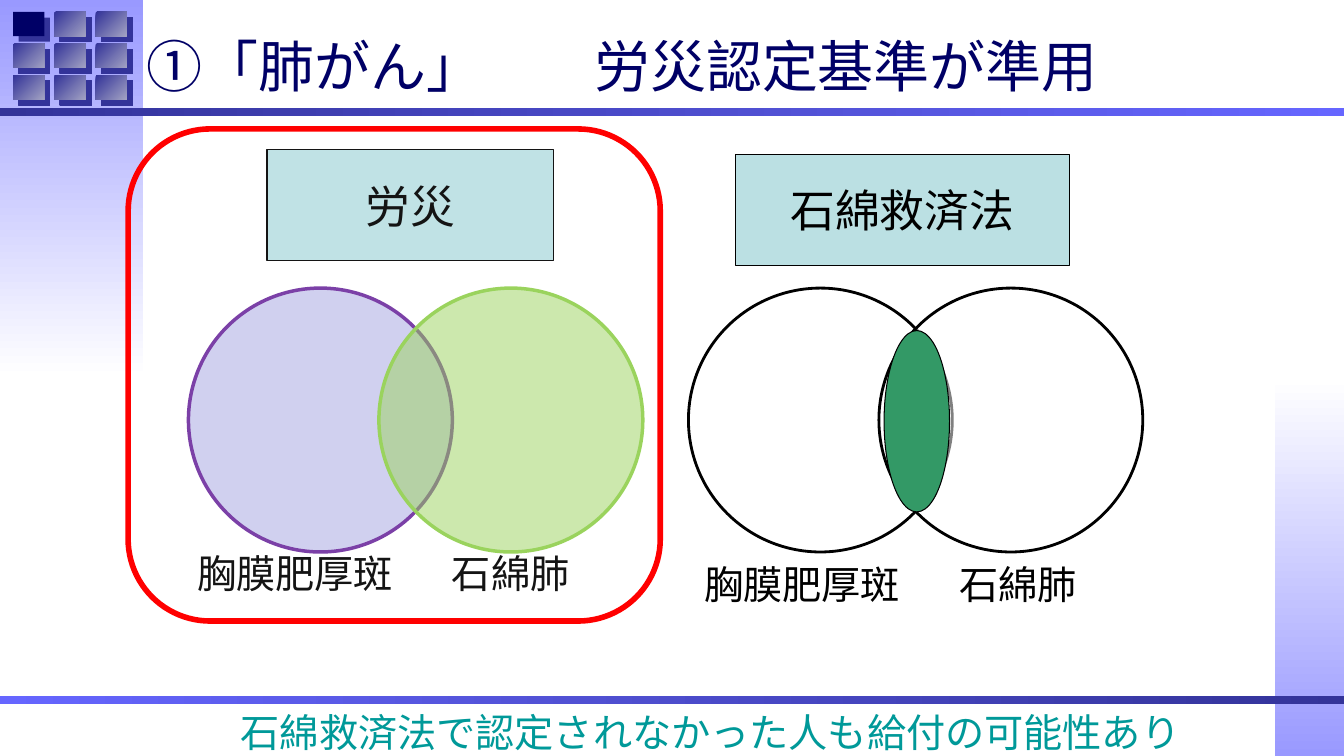
"""Build the slide comparing the lung cancer criteria of two compensation schemes."""
from lxml.etree import SubElement
from pptx import Presentation
from pptx.dml.color import RGBColor
from pptx.enum.shapes import MSO_SHAPE as Shape
from pptx.enum.text import MSO_ANCHOR as Anchor, PP_ALIGN as Align
from pptx.oxml.ns import qn
from pptx.util import Cm, Pt

COLORS = {
    "white": "FFFFFF", "black": "000000", "navy": "000066", "indigo": "333399",
    "blue": "6666FF", "lavender": "9999FF", "haze": "A2A2C3", "periwinkle": "9C9CDF",
    "purple": "7030A0", "lime": "92D050", "green": "339966", "sky": "BBE0E3",
    "teal": "009999", "red": "FF0000",
}
WIDTH, HEIGHT = 33.87, 19.05


class SlideBuilder:
    """Hold the style and the current slide."""

    def __init__(self, slide, font="Arial"):
        self.shapes = slide.shapes
        self.font = font

    def color(self, name):
        return RGBColor.from_string(COLORS[name])

    def outline(self, shape, line):
        if line:
            name, width = line
            shape.line.color.rgb = self.color(name)
            shape.line.width = Pt(width)
        else:
            shape.line.fill.background()

    def shape(self, kind, box, fill, line=None, alpha=None):
        shape = self.shapes.add_shape(kind, *map(Cm, box))
        shape.shadow.inherit = False
        shape.fill.solid()
        shape.fill.fore_color.rgb = self.color(fill)
        if alpha is not None:
            tint = shape._element.spPr.find(qn("a:solidFill"))[0]
            SubElement(tint, qn("a:alpha"), val=str(alpha * 1000))
        self.outline(shape, line)
        return shape

    def gradient(self, box, start, end, angle):
        shape = self.shape(Shape.RECTANGLE, box, start)
        shape.fill.gradient()
        shape.fill.gradient_angle = angle
        for stop, name in zip(shape.fill.gradient_stops, (start, end)):
            stop.color.rgb = self.color(name)
        return shape

    def tile_shadow(self, tile):
        effects = tile._element.spPr.find(qn("a:effectLst"))
        shadow = SubElement(effects, qn("a:outerShdw"), dist=str(int(Pt(5.7))),
                            dir="2700000", algn="ctr", rotWithShape="0")
        SubElement(shadow, qn("a:srgbClr"), val=COLORS["indigo"])

    def fill_text(self, shape, text, size, color, align=Align.LEFT, anchor=Anchor.TOP):
        frame = shape.text_frame
        frame.text = text
        frame.word_wrap = True
        frame.vertical_anchor = anchor
        paragraph = frame.paragraphs[0]
        paragraph.alignment = align
        font = paragraph.runs[0].font
        font.name = self.font
        font.size = Pt(size)
        font.color.rgb = self.color(color)

    def text(self, box, text, size, color, anchor=Anchor.TOP):
        self.fill_text(self.shapes.add_textbox(*map(Cm, box)), text, size, color, anchor=anchor)

    def heading(self, box, text):
        panel = self.shape(Shape.RECTANGLE, box, "sky", ("black", 0.75))
        self.fill_text(panel, text, 32, "black", Align.CENTER, Anchor.MIDDLE)

    def venn(self, left, circles):
        for index, (fill, line) in enumerate(circles):
            box = (left + index * 4.8, 7.26, 6.65, 6.65)
            self.shape(Shape.OVAL, box, fill, line, alpha=50)

    def venn_labels(self, left, top):
        self.text((left, top, 5.59, 1.45), "胸膜肥厚斑", 28, "black")
        self.text((left + 6.42, top, 3.61, 1.45), "石綿肺", 28, "black")

    def backdrop(self):
        self.gradient((0, 0, 3.61, HEIGHT / 2), "lavender", "white", 270)
        for index in range(9):
            row, column = divmod(index, 3)
            box = (0.33 + column * 1.04, 0.3 + row * 0.8, 0.79, 0.61)
            if index == 0:
                tile = self.shape(Shape.RECTANGLE, box, "navy")
            else:
                tile = self.gradient(box, "indigo", "haze", 315)
            self.tile_shadow(tile)
        self.gradient((32.13, HEIGHT / 2, 1.74, HEIGHT / 2), "white", "lavender", 270)
        self.gradient((0, 2.72, WIDTH, 0.2), "indigo", "blue", 0)
        self.gradient((0, 17.53, WIDTH, 0.2), "blue", "indigo", 0)


def main():
    deck = Presentation()
    deck.slide_width, deck.slide_height = Cm(WIDTH), Cm(HEIGHT)
    page = SlideBuilder(deck.slides.add_slide(deck.slide_layouts[6]))

    page.backdrop()
    page.text((3.45, 0.53, 30.4, 2.21), "①「肺がん」　　労災認定基準が準用",
              40, "navy", Anchor.MIDDLE)

    page.venn(4.75, [("periwinkle", ("purple", 2.5)), ("lime", ("lime", 2.5))])
    page.heading((6.73, 3.78, 7.21, 2.79), "労災")
    page.venn_labels(4.72, 13.72)

    page.venn(17.35, [("white", ("black", 2))] * 2)
    page.shape(Shape.OVAL, (22.28, 8.33, 1.65, 4.57), "green", ("black", 0.75))
    page.heading((18.54, 3.89, 8.41, 2.79), "石綿救済法")
    page.venn_labels(17.5, 14)

    page.text((5.82, 17.73, 25.55, 1.45),
              "石綿救済法で認定されなかった人も給付の可能性あり", 28, "teal")
    page.shape(Shape.ROUNDED_RECTANGLE, (3.23, 3.25, 13.41, 12.4), "white", ("red", 4), alpha=8)

    deck.save("out.pptx")


if __name__ == "__main__":
    main()
